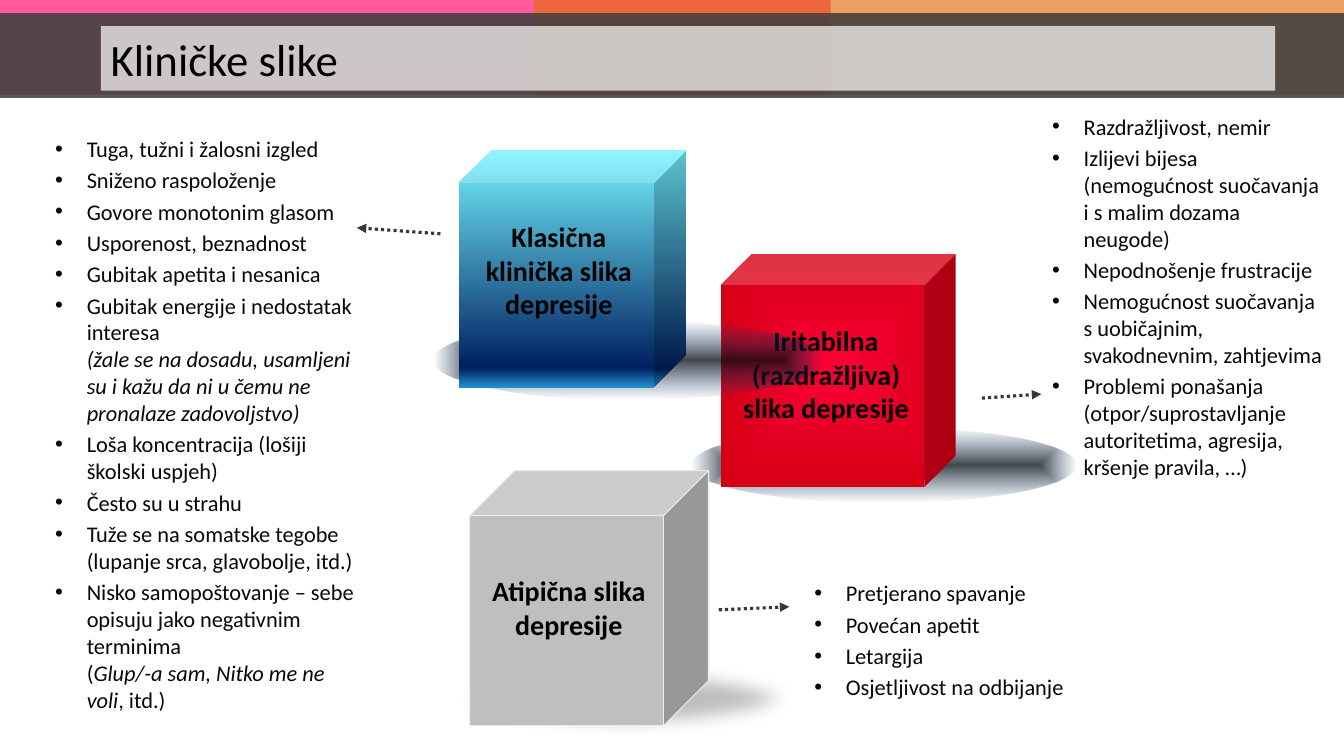
"""Build the slide on the clinical pictures of depression."""
from lxml import etree
from pptx import Presentation
from pptx.dml.color import RGBColor
from pptx.enum.dml import MSO_LINE
from pptx.enum.shapes import MSO_CONNECTOR, MSO_SHAPE
from pptx.enum.text import MSO_ANCHOR, PP_ALIGN
from pptx.oxml.ns import qn
from pptx.util import Pt

RECT, OVAL, CUBE = MSO_SHAPE.RECTANGLE, MSO_SHAPE.OVAL, MSO_SHAPE.CUBE
STRAIGHT, DOTTED = MSO_CONNECTOR.STRAIGHT, MSO_LINE.ROUND_DOT
LEFT, CENTER = PP_ALIGN.LEFT, PP_ALIGN.CENTER
TOP, MIDDLE = MSO_ANCHOR.TOP, MSO_ANCHOR.MIDDLE

FONT = "Calibri"
BLACK, BODY, ARROW, GREY = "000000", "080808", "353637", "BFBFBF"
INDENT = 22.5
SPACE_BEFORE = 3.2
SOFT_EDGE = 12.5

TITLE = "Kliničke slike"
CLASSIC_SIGNS = [
    "Tuga, tužni i žalosni izgled",
    "Sniženo raspoloženje",
    "Govore monotonim glasom",
    "Usporenost, beznadnost",
    "Gubitak apetita i nesanica",
    [("Gubitak energije i nedostatak interesa\n", False),
     ("(žale se na dosadu, usamljeni su i kažu da ni u čemu ne pronalaze zadovoljstvo)", True)],
    "Loša koncentracija (lošiji školski uspjeh)",
    "Često su u strahu",
    "Tuže se na somatske tegobe (lupanje srca, glavobolje, itd.)",
    [("Nisko samopoštovanje – sebe opisuju jako negativnim terminima\n(", False),
     ("Glup/-a sam, Nitko me ne voli", True), (", itd.)", False)],
]
IRRITABLE_SIGNS = [
    "Razdražljivost, nemir",
    "Izlijevi bijesa (nemogućnost suočavanja i s malim dozama neugode)",
    "Nepodnošenje frustracije",
    "Nemogućnost suočavanja s uobičajnim, svakodnevnim, zahtjevima",
    "Problemi ponašanja (otpor/suprostavljanje autoritetima, agresija, kršenje pravila, …)",
]
ATYPICAL_SIGNS = [
    "Pretjerano spavanje", "Povećan apetit", "Letargija", "Osjetljivost na odbijanje",
]

SHADOW_STOPS = [(0, "070D13", 76), (100, "1F497D", 0)]
GLOW_STOPS = [(0, "8EB4E3", 0), (100, "FFFFFF", 77)]
RED_STOPS = [(0, "FB0036", 100), (100, "D60015", 100)]
BLUE_STOPS = [(0, "74F4FF", 100), (92, "002060", 100), (100, "208ECD", 100)]

IRRITABLE = {
    "shadow": (493.9, 305.3, 275, 53.3),
    "cube": (514.8, 181.4, 167.8, 166.3),
    "depth": 0.133, "stops": RED_STOPS, "angle": None,
    "glow": (517.7, 217.4, 139, 90.7),
    "label": "Iritabilna (razdražljiva) slika depresije",
    "label_box": (519.1, 227.5, 141.8, 79.9),
}
CLASSIC = {
    "shadow": (309.6, 229, 277.9, 56.2),
    "cube": (327.6, 107.3, 162.7, 169.2),
    "depth": 0.144, "stops": BLUE_STOPS, "angle": 90,
    "glow": None,
    "label": "Klasična klinička slika depresije",
    "label_box": (328.3, 153.4, 141.8, 79.9),
}
ARROWS = [
    (513.4, 435.6, 563.8, 433.4),
    (701.3, 284.4, 743.8, 281.5),
    (314.6, 167, 254.9, 162.7),
]
BANDS = [
    ((0, 0, 593.3, 67.7), "FF0066", 65),
    ((381.6, 0, 578.4, 67.7), "E46C0A", 65),
    ((0, 9.4, 960, 60.5), "404040", 88),
]
TITLE_BOX = (72, 18.7, 838.8, 46.1)

deck = Presentation()
deck.slide_width, deck.slide_height = Pt(960), Pt(540)
slide = deck.slides.add_slide(deck.slide_layouts[6])


def child(parent, tag, **attributes):
    element = etree.SubElement(parent, qn(tag))
    for key, value in attributes.items():
        element.set(key, str(value))
    return element


def rgb(code):
    return RGBColor.from_string(code)


def add_solid(kind, box, color, opacity=100):
    shape = slide.shapes.add_shape(kind, *map(Pt, box))
    shape.shadow.inherit = False
    shape.line.fill.background()
    shape.fill.solid()
    shape.fill.fore_color.rgb = rgb(color)
    if opacity < 100:
        swatch = shape.element.spPr.find(qn("a:solidFill"))[0]
        child(swatch, "a:alpha", val=opacity * 1000)
    return shape


def add_gradient(kind, box, stops, angle=None):
    shape = add_solid(kind, box, stops[0][1])
    properties = shape.element.spPr
    gradient = etree.Element(qn("a:gradFill"), rotWithShape="1")
    stop_list = child(gradient, "a:gsLst")
    for position, color, opacity in stops:
        stop = child(stop_list, "a:gs", pos=position * 1000)
        swatch = child(stop, "a:srgbClr", val=color)
        if opacity < 100:
            child(swatch, "a:alpha", val=opacity * 1000)
    if angle is None:
        focus = child(gradient, "a:path", path="shape")
        child(focus, "a:fillToRect", l=50000, t=50000, r=50000, b=50000)
    else:
        child(gradient, "a:lin", ang=angle * 60000, scaled=0)
    properties.replace(properties.find(qn("a:solidFill")), gradient)
    return shape


def write(shape, paragraphs, size, color, align=LEFT, bold=False, bullets=False, anchor=TOP):
    frame = shape.text_frame
    frame.word_wrap = True
    frame.vertical_anchor = anchor
    for number, content in enumerate(paragraphs):
        paragraph = frame.add_paragraph() if number else frame.paragraphs[0]
        paragraph.alignment = align
        if bullets:
            paragraph.space_before = Pt(SPACE_BEFORE)
            layout = paragraph._p.get_or_add_pPr()
            layout.set("marL", str(Pt(INDENT)))
            layout.set("indent", str(-Pt(INDENT)))
            child(layout, "a:buFont", typeface="Arial")
            child(layout, "a:buChar", char="•")
        pieces = [(content, False)] if isinstance(content, str) else content
        for text, italic in pieces:
            for row, line in enumerate(text.split("\n")):
                if row:
                    paragraph.add_line_break()
                if line:
                    run = paragraph.add_run()
                    run.text = line
                    run.font.name, run.font.size = FONT, Pt(size)
                    run.font.bold, run.font.italic = bold, italic
                    run.font.color.rgb = rgb(color)


def add_label(box, text):
    write(slide.shapes.add_textbox(*map(Pt, box)), [text], 20, BLACK, CENTER, bold=True)


def add_signs(box, signs):
    write(slide.shapes.add_textbox(*map(Pt, box)), signs, 16, BODY, bullets=True)


def add_picture_cube(form):
    add_gradient(OVAL, form["shadow"], SHADOW_STOPS)
    if form["glow"]:
        add_gradient(RECT, form["glow"], GLOW_STOPS, 270)
    cube = add_gradient(CUBE, form["cube"], form["stops"], form["angle"])
    cube.adjustments[0] = form["depth"]
    add_label(form["label_box"], form["label"])


def add_arrow(ends):
    arrow = slide.shapes.add_connector(STRAIGHT, *map(Pt, ends))
    arrow.line.color.rgb = rgb(ARROW)
    arrow.line.width = Pt(2.25)
    arrow.line.dash_style = DOTTED
    child(arrow.line._get_or_add_ln(), "a:tailEnd", type="triangle")
    child(arrow.element.spPr, "a:effectLst")


add_picture_cube(IRRITABLE)

atypical_shadow = add_solid(OVAL, (314.6, 470.2, 266.4, 56.9), GREY)
child(atypical_shadow.element.spPr.find(qn("a:effectLst")), "a:softEdge", rad=Pt(SOFT_EDGE))
atypical_cube = add_solid(CUBE, (335.5, 336.2, 170.6, 182.2), GREY)
atypical_cube.adjustments[0] = 0.188
atypical_cube.line.color.rgb = rgb("EEECE1")
atypical_cube.line.width = Pt(0.75)
add_solid(RECT, (338.4, 375.8, 134.6, 96.5), GREY)
add_label((335.5, 406.1, 141.8, 55.4), "Atipična slika depresije")

add_signs((574.6, 410.4, 352.1, 122.4), ATYPICAL_SIGNS)
for ends in ARROWS:
    add_arrow(ends)
for box, color, opacity in BANDS:
    add_solid(RECT, box, color, opacity)
write(add_solid(RECT, TITLE_BOX, "FFFFFF", 70), [TITLE], 32, BLACK, anchor=MIDDLE)
add_signs((32.4, 92.9, 235.4, 429.8), CLASSIC_SIGNS)
add_signs((744.5, 77, 211.7, 301), IRRITABLE_SIGNS)
add_picture_cube(CLASSIC)

deck.save("out.pptx")
